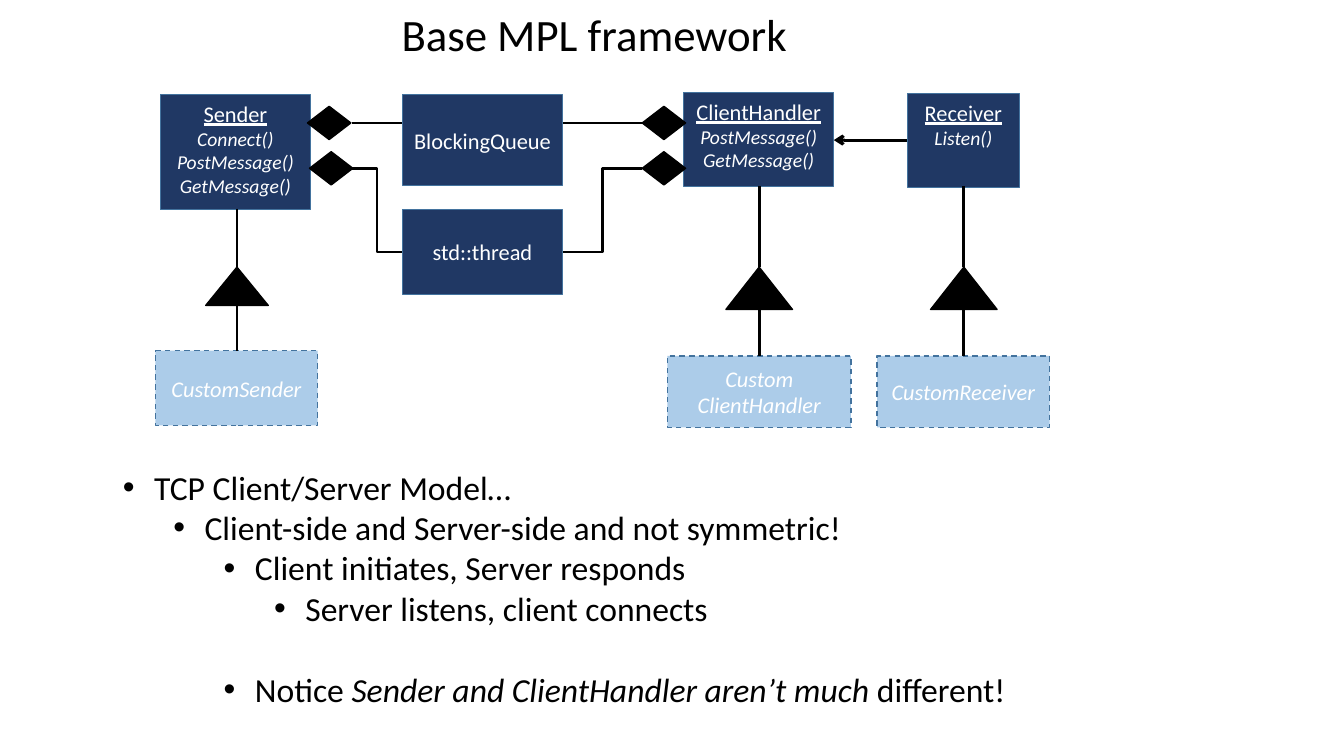
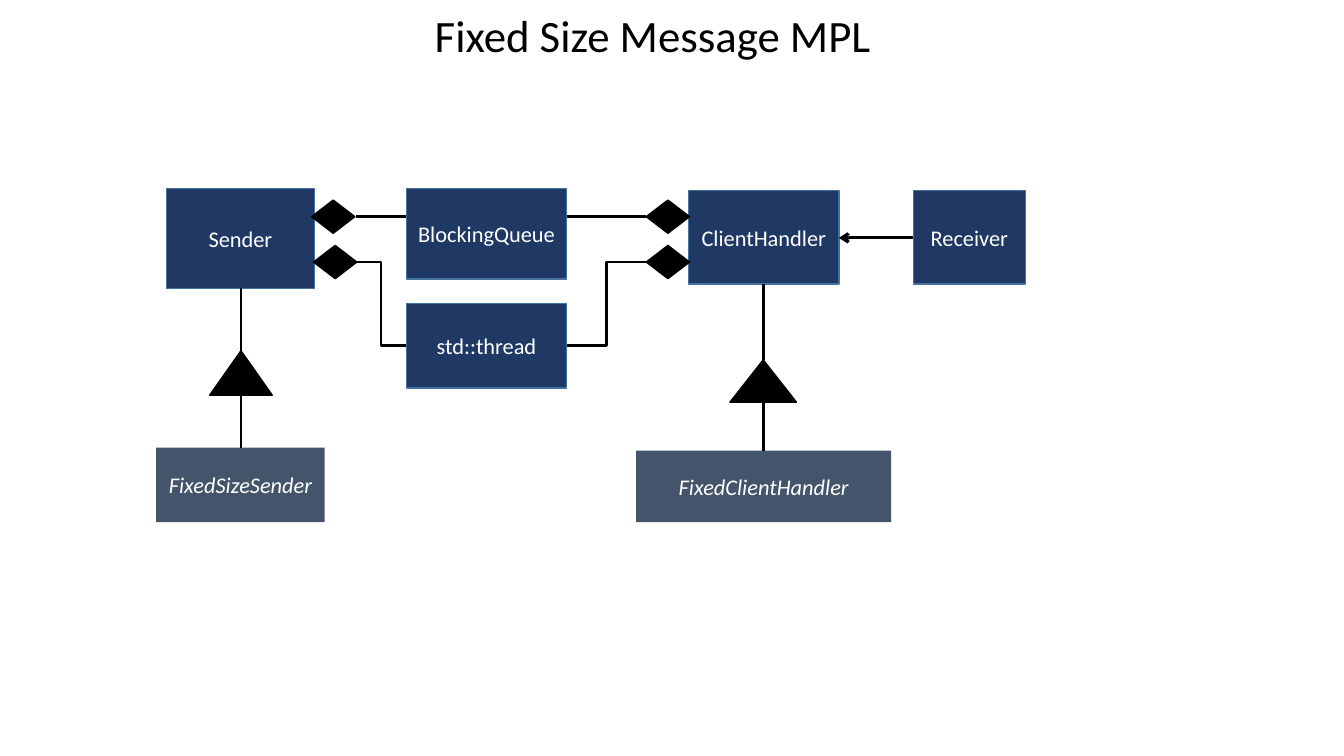
from lxml.etree import SubElement
from pptx import Presentation
from pptx.dml.color import RGBColor
from pptx.enum.dml import MSO_LINE
from pptx.enum.shapes import MSO_CONNECTOR, MSO_SHAPE
from pptx.enum.text import MSO_ANCHOR, MSO_AUTO_SIZE, PP_ALIGN
from pptx.oxml.ns import qn
from pptx.util import Inches, Pt

# Shared style
FONT = "Calibri"
BLACK, WHITE = "000000", "FFFFFF"
NAVY, SKY, SLATE, EDGE = "203864", "5B9BD5", "44546A", "43739E"
DIAMOND_W, DIAMOND_H = 0.43, 0.33
BULLET_INDENT, LEVEL_STEP = 0.31, 0.5


def rgb(value):
    return RGBColor.from_string(value)


# Text
def add_text(paragraph, text, size=16, color=WHITE, italic=False, underline=False):
    run = paragraph.add_run()
    run.text = text
    font = run.font
    font.name, font.size = FONT, Pt(size)
    font.italic, font.underline = italic, underline
    font.color.rgb = rgb(color)


def next_paragraph(frame, index):
    return frame.add_paragraph() if index else frame.paragraphs[0]


def add_title(slide, text, left, top):
    title = slide.shapes.title
    title.left, title.top = Inches(left), Inches(top)
    title.width, title.height = Inches(9.85), Inches(0.64)
    frame = title.text_frame
    frame.auto_size = MSO_AUTO_SIZE.NONE
    frame.vertical_anchor = MSO_ANCHOR.TOP
    heading = frame.paragraphs[0]
    heading.alignment = PP_ALIGN.CENTER
    add_text(heading, text, size=32, color=BLACK)


def add_bullets(slide, left, top, width, height, items):
    """Each item is (level, space before in points, [(text, italic), ...])."""
    frame = slide.shapes.add_textbox(
        Inches(left), Inches(top), Inches(width), Inches(height)).text_frame
    frame.word_wrap = True
    for index, (level, gap, parts) in enumerate(items):
        bullet = next_paragraph(frame, index)
        bullet.level = level
        bullet.space_before = Pt(gap)
        for text, italic in parts:
            add_text(bullet, text, size=24, color=BLACK, italic=italic)
        props = bullet._p.get_or_add_pPr()
        props.set("marL", str(Inches(BULLET_INDENT + level * LEVEL_STEP)))
        props.set("indent", str(-Inches(BULLET_INDENT)))
        SubElement(props, qn("a:buFont")).set("typeface", "Arial")
        SubElement(props, qn("a:buChar")).set("char", "•")


# Diagram parts
def add_solid(slide, kind, left, top, width, height, fill, edge=None):
    solid = slide.shapes.add_shape(
        kind, Inches(left), Inches(top), Inches(width), Inches(height))
    solid.shadow.inherit = False
    solid.fill.solid()
    solid.fill.fore_color.rgb = rgb(fill)
    if edge:
        solid.line.color.rgb = rgb(edge)
        solid.line.width = Pt(1)
    else:
        solid.line.fill.background()
    return solid


def add_class(slide, place, names, methods=(), fill=NAVY, edge=EDGE, italic=False):
    """A class box; with methods the name is underlined and the text starts at the top."""
    box = add_solid(slide, MSO_SHAPE.RECTANGLE, *place, fill, edge)
    frame = box.text_frame
    frame.word_wrap = True
    frame.vertical_anchor = MSO_ANCHOR.TOP if methods else MSO_ANCHOR.MIDDLE
    for index, text in enumerate((*names, *methods)):
        row = next_paragraph(frame, index)
        row.alignment = PP_ALIGN.CENTER
        if index < len(names):
            add_text(row, text, italic=italic, underline=bool(methods))
        else:
            add_text(row, text, size=14, italic=True)
    return box


def add_custom_class(slide, place, *names):
    box = add_class(slide, place, names, fill=SKY, italic=True)
    box.line.dash_style = MSO_LINE.DASH
    color = box.fill._xPr.find(qn("a:solidFill"))[0]
    SubElement(color, qn("a:alpha")).set("val", "50000")


def add_link(slide, start, end, kind=MSO_CONNECTOR.STRAIGHT, width=2, arrow=False):
    link = slide.shapes.add_connector(kind, *map(Inches, (*start, *end)))
    link.line.color.rgb = rgb(BLACK)
    link.line.width = Pt(width)
    if arrow:
        SubElement(link.line._get_or_add_ln(), qn("a:tailEnd")).set("type", "arrow")
    SubElement(link._element.spPr, qn("a:effectLst"))


def add_inheritance(slide, center, parent_bottom, child_top, tip, width=0.66, height=0.42):
    add_solid(slide, MSO_SHAPE.ISOSCELES_TRIANGLE,
              center - width / 2, tip, width, height, BLACK, BLACK)
    add_link(slide, (center, parent_bottom), (center, tip))
    add_link(slide, (center, tip + height), (center, child_top))


def add_composition(slide, left, top):
    """Queue and thread boxes with the diamonds of the owners on both sides."""
    width, thread_drop = 1.59, 1.14
    right, thread_middle = left + width, top + thread_drop + 0.42
    add_class(slide, (left, top, width, 0.9), ["BlockingQueue"])
    add_class(slide, (left, top + thread_drop, width, 0.84), ["std::thread"])

    queue_y, thread_y = top + 0.28, top + 0.73
    handler_diamond = right + 0.79
    for diamond_left, middle in ((left - 0.94, queue_y), (left - 0.92, thread_y),
                                 (handler_diamond, queue_y), (handler_diamond, thread_y)):
        add_solid(slide, MSO_SHAPE.DIAMOND, diamond_left, middle - DIAMOND_H / 2,
                  DIAMOND_W, DIAMOND_H, BLACK, BLACK)
    for owner_x, part_x in ((left - 0.5, left), (handler_diamond, right)):
        add_link(slide, (owner_x, queue_y), (part_x, queue_y))
        add_link(slide, (owner_x, thread_y), (part_x, thread_middle), MSO_CONNECTOR.ELBOW)


# Slides
def build_base_framework(slide):
    add_title(slide, "Base MPL framework", 0.97, 0.02)

    messaging = ["PostMessage()", "GetMessage()"]
    add_class(slide, (1.59, 0.94, 1.49, 1.14), ["Sender"], ["Connect()", *messaging])
    add_class(slide, (6.78, 0.92, 1.49, 0.93), ["ClientHandler"], messaging)
    add_class(slide, (9, 0.93, 1.11, 0.93), ["Receiver"], ["Listen()"])
    add_composition(slide, 3.99, 0.94)
    add_link(slide, (9, 1.39), (8.27, 1.39), width=2.25, arrow=True)

    add_custom_class(slide, (1.54, 3.48, 1.61, 0.74), "CustomSender")
    add_custom_class(slide, (6.62, 3.53, 1.82, 0.71), "Custom", "ClientHandler")
    add_custom_class(slide, (8.7, 3.53, 1.71, 0.71), "CustomReceiver")
    add_inheritance(slide, 2.35, 2.07, 3.48, 2.65, width=0.62, height=0.38)
    for center in (7.53, 9.56):
        add_inheritance(slide, center, 1.85, 3.53, 2.65)

    add_bullets(slide, 1.12, 4.58, 10.51, 2.52, [
        (0, 0, [("TCP Client/Server Model…", False)]),
        (1, 0, [("Client-side and Server-side and not symmetric!", False)]),
        (2, 0, [("Client initiates, Server responds", False)]),
        (3, 0, [("Server listens, client connects", False)]),
        (2, 29, [("Notice ", False),
                 ("Sender and ClientHandler aren’t much ", True),
                 ("different!", False)]),
    ])


def build_fixed_size(slide):
    add_title(slide, "Fixed Size Message MPL", 1.55, 0.03)

    add_class(slide, (1.65, 1.87, 1.47, 0.99), ["Sender"])
    add_class(slide, (6.83, 1.89, 1.49, 0.93), ["ClientHandler"])
    add_class(slide, (9.06, 1.89, 1.11, 0.93), ["Receiver"])
    add_composition(slide, 4.03, 1.87)
    add_link(slide, (9.06, 2.36), (8.32, 2.36), width=2.25, arrow=True)

    for place, name in (((1.55, 4.44, 1.67, 0.74), "FixedSizeSender"),
                        ((6.31, 4.47, 2.53, 0.71), "FixedClientHandler")):
        add_class(slide, place, [name], fill=SLATE, edge=None, italic=True)
    add_inheritance(slide, 2.39, 2.86, 4.44, 3.48, width=0.62, height=0.44)
    add_inheritance(slide, 7.57, 2.82, 4.47, 3.57)


def main():
    deck = Presentation()
    deck.slide_width, deck.slide_height = Inches(13.33), Inches(7.5)
    title_only = deck.slide_layouts[5]
    for build in (build_base_framework, build_fixed_size):
        build(deck.slides.add_slide(title_only))
    deck.save("out.pptx")


if __name__ == "__main__":
    main()
